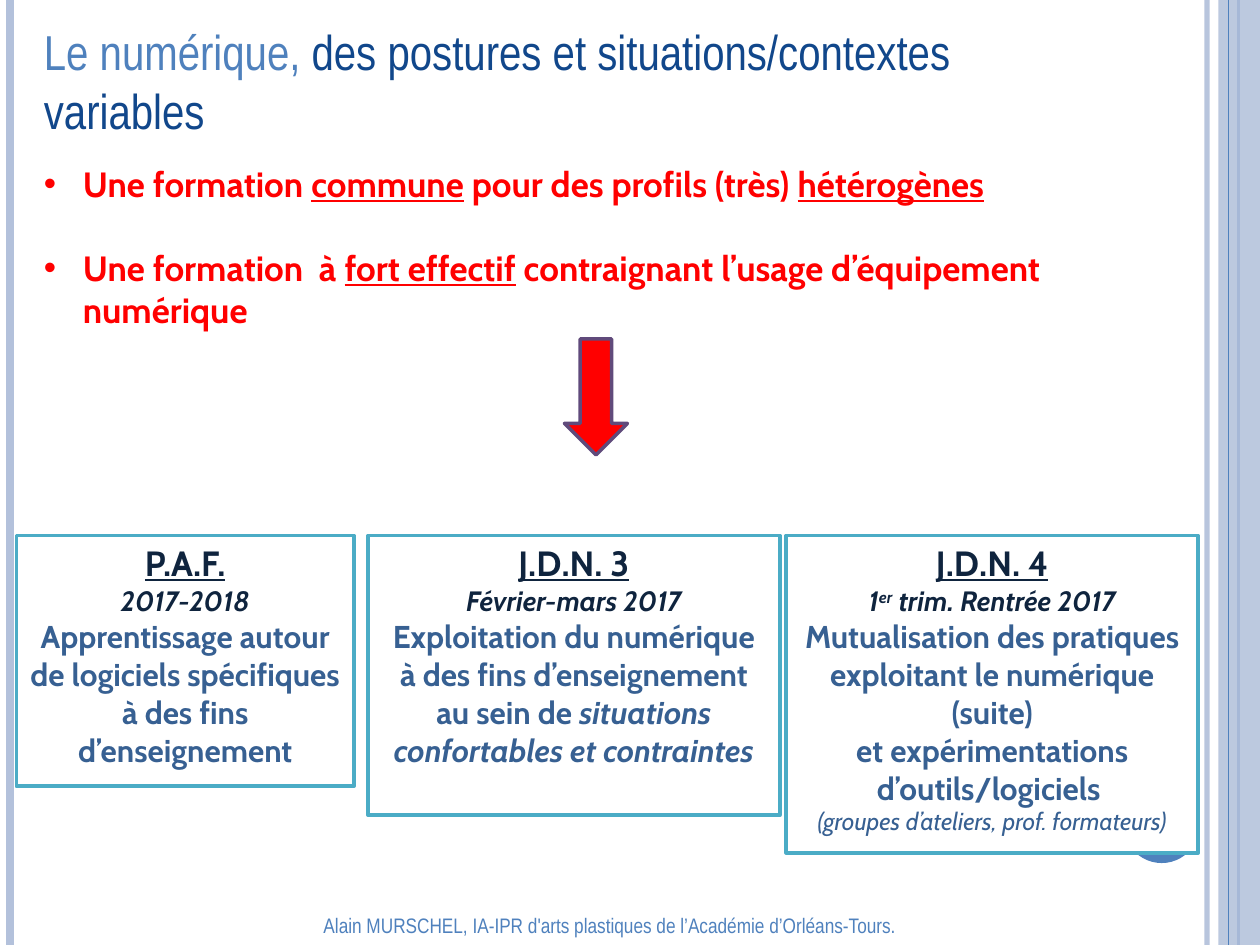
from lxml import etree
from pptx import Presentation
from pptx.dml.color import RGBColor
from pptx.enum.shapes import MSO_CONNECTOR, MSO_SHAPE
from pptx.enum.text import MSO_ANCHOR, PP_ALIGN
from pptx.oxml.ns import qn
from pptx.util import Inches, Pt

STRAIGHT = MSO_CONNECTOR.STRAIGHT
RECTANGLE, OVAL, DOWN_ARROW = MSO_SHAPE.RECTANGLE, MSO_SHAPE.OVAL, MSO_SHAPE.DOWN_ARROW
TOP, MIDDLE = MSO_ANCHOR.TOP, MSO_ANCHOR.MIDDLE
LEFT, CENTER = PP_ALIGN.LEFT, PP_ALIGN.CENTER

BLUE, PALE, NAVY, RED = "4F81BD", "B3C1DB", "11478B", "FF0000"
INK, STEEL, TEAL, PURPLE, WHITE = "0F243E", "376092", "4BACC6", "604A7B", "FFFFFF"
NARROW, CABIN = "Arial Narrow", "Cabin"

TITLE = dict(font=NARROW, size=28, color=BLUE)
TITLE_DARK = dict(TITLE, color=NAVY)
FOOTER = dict(font=NARROW, size=12, color=BLUE)
POINT = dict(font=CABIN, size=20, color=RED, bold=True)
POINT_KEY = dict(POINT, underline=True)
HEADING = dict(font=CABIN, size=20, color=INK, bold=True, underline=True)
DATE = dict(font=CABIN, size=16, color=INK, bold=True, italic=True)
DATE_RAISED = dict(DATE, baseline=30000)
BODY = dict(font=CABIN, size=18, color=STEEL, bold=True)
BODY_ITALIC = dict(BODY, italic=True)
NOTE = dict(font=CABIN, size=14, color=STEEL, italic=True)

POINTS = [
    [("Une formation ", POINT), ("commune", POINT_KEY),
     (" pour des profils (très) ", POINT), ("hétérogènes", POINT_KEY)],
    [("Une formation  à ", POINT), ("fort effectif", POINT_KEY),
     (" contraignant l’usage d’équipement numérique", POINT)],
]

CARDS = [
    ((0.13, 4.25, 2.68, 1.99), [
        [("P.A.F.", HEADING)],
        [("2017-2018", DATE)],
        [("Apprentissage autour de logiciels spécifiques à des fins d’enseignement", BODY)],
    ]),
    ((2.92, 4.25, 3.27, 2.22), [
        [("J.D.N. 3", HEADING)],
        [("Février-mars 2017", DATE)],
        [("Exploitation du numérique", BODY)],
        [("à des fins d’enseignement au sein de ", BODY),
         ("situations confortables et contraintes", BODY_ITALIC)],
    ]),
    ((6.24, 4.25, 3.27, 2.52), [
        [("J.D.N. 4", HEADING)],
        [("1", DATE), ("er", DATE_RAISED), (" trim. Rentrée 2017", DATE)],
        [("Mutualisation des pratiques exploitant le numérique (suite)", BODY)],
        [("et expérimentations d’outils/logiciels ", BODY)],
        [("(groupes d’ateliers, prof. formateurs)", NOTE)],
    ]),
]


def rgb(color):
    return RGBColor.from_string(color)


def place(box):
    return [Inches(length) for length in box]


def set_alpha(element, percent):
    color = next(element.iter(qn("a:srgbClr")))
    etree.SubElement(color, qn("a:alpha")).set("val", str(percent * 1000))


def add_filled(page, kind, box, fill, line=None):
    shape = page.shapes.add_shape(kind, *place(box))
    shape.shadow.inherit = False
    shape.fill.solid()
    shape.fill.fore_color.rgb = rgb(fill)
    if line:
        shape.line.color.rgb = rgb(line)
        shape.line.width = Pt(2)
    else:
        shape.line.fill.background()
    return shape


def add_rule(page, x, height, color, width):
    rule = page.shapes.add_connector(STRAIGHT, *place((x, 0, x, height)))
    rule.line.color.rgb = rgb(color)
    rule.line.width = Pt(width)
    etree.SubElement(rule._element.spPr, qn("a:effectLst"))
    return rule


def write(shape, paragraphs, align=LEFT, anchor=TOP):
    frame = shape.text_frame
    frame.word_wrap = True
    frame.vertical_anchor = anchor
    for index, pieces in enumerate(paragraphs):
        para = frame.add_paragraph() if index else frame.paragraphs[0]
        para.alignment = align
        for text, style in pieces:
            span = para.add_run()
            span.text = text
            font = span.font
            font.name = style["font"]
            font.size = Pt(style["size"])
            font.color.rgb = rgb(style["color"])
            font.bold = style.get("bold", False)
            font.italic = style.get("italic", False)
            font.underline = style.get("underline", False)
            if "baseline" in style:
                span._r.get_or_add_rPr().set("baseline", str(style["baseline"]))
    return frame.paragraphs


def add_text(page, box, paragraphs, **layout):
    return write(page.shapes.add_textbox(*place(box)), paragraphs, **layout)


def draw_frame(page, box):
    left, top, width, height = box
    right = left + width
    inner_rule = add_rule(page, right - 0.42, height, PALE, 3)
    set_alpha(inner_rule._element.spPr, 93)
    add_rule(page, left + 0.08, height, PALE, 4.5)
    add_rule(page, right - 0.17, height, BLUE, 1.5)
    band = add_filled(page, RECTANGLE, (right - 0.33, top, 0.33, height), PALE)
    set_alpha(band._element.spPr, 87)
    add_rule(page, right - 0.25, height, BLUE, 0.75)
    add_filled(page, OVAL, (right - 1.08, top + 6.25, 0.6, 0.6), BLUE)


def draw_points(page, box):
    for index, para in enumerate(add_text(page, box, POINTS)):
        if index:
            para.space_before = Pt(24)
        properties = para._p.get_or_add_pPr()
        properties.set("marL", str(Inches(0.31)))
        properties.set("indent", str(-Inches(0.31)))
        etree.SubElement(properties, qn("a:buFont")).set("typeface", "Arial")
        etree.SubElement(properties, qn("a:buChar")).set("char", "•")


def draw_card(page, box, paragraphs):
    card = add_filled(page, RECTANGLE, box, WHITE, TEAL)
    write(card, paragraphs, align=CENTER)


def main():
    deck = Presentation()
    deck.slide_width, deck.slide_height = Inches(10), Inches(7.5)
    page = deck.slides.add_slide(deck.slide_layouts[6])
    draw_frame(page, (0, 0, 10, 7.5))
    add_text(page, (0.25, 0.12, 8.18, 0.57), [[
        ("Le numérique,", TITLE),
        (" des postures et situations/contextes variables", TITLE_DARK),
    ]])
    add_text(page, (0, 7.18, 9.68, 0.32), [[
        ("Alain MURSCHEL, IA-IPR d'arts plastiques de l’Académie d’Orléans-Tours.", FOOTER),
    ]], align=CENTER, anchor=MIDDLE)
    draw_points(page, (0.25, 1.24, 9.26, 1.45))
    add_filled(page, DOWN_ARROW, (4.48, 2.69, 0.5, 0.92), RED, PURPLE)
    for box, paragraphs in CARDS:
        draw_card(page, box, paragraphs)
    deck.save("out.pptx")


if __name__ == "__main__":
    main()
